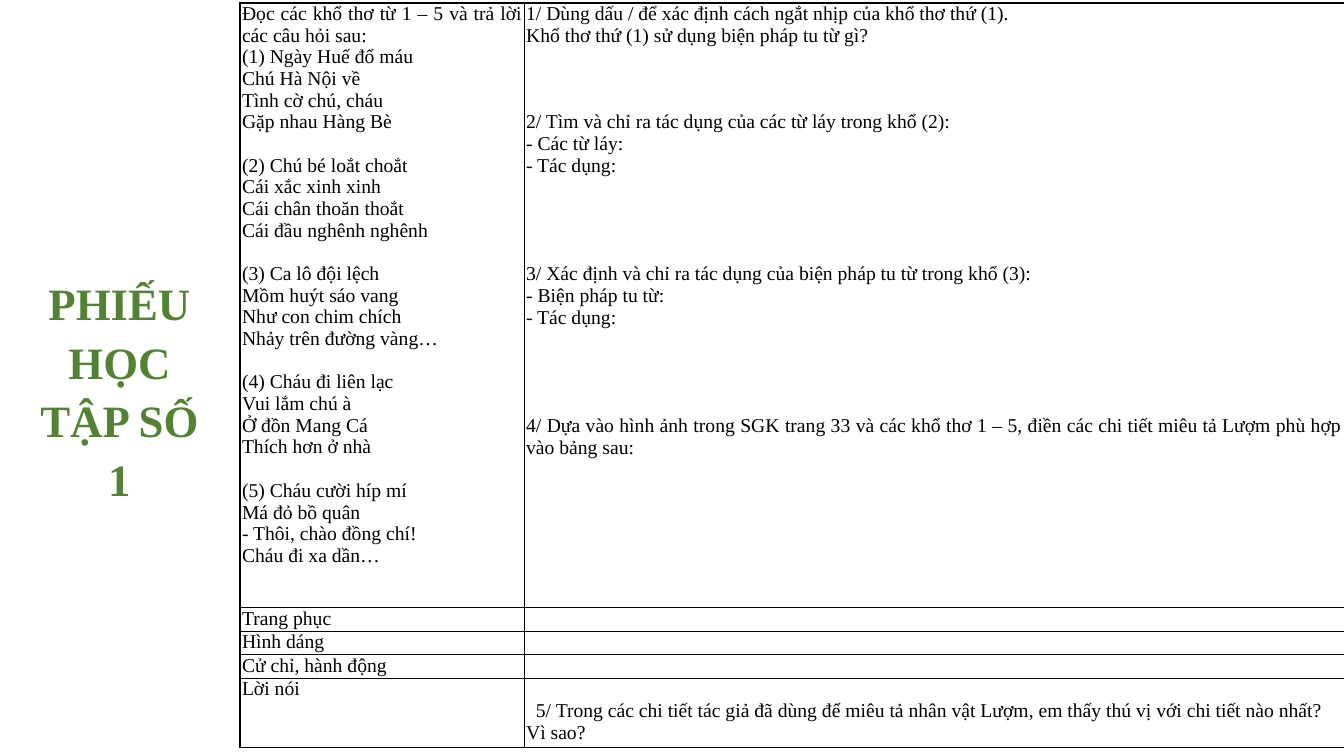
from dataclasses import dataclass, field

import pptx
import pptx.dml.color
import pptx.enum.text
import pptx.oxml
import pptx.oxml.ns
import pptx.presentation
import pptx.slide
import pptx.table
import pptx.text.text
import pptx.util

BLACK = pptx.dml.color.RGBColor(0, 0, 0)
GREEN = pptx.dml.color.RGBColor(0x54, 0x82, 0x35)
FONT = "Times New Roman"
ALIGN = pptx.enum.text.PP_ALIGN
SLIDE_WIDTH = pptx.util.Inches(13.33)
SLIDE_HEIGHT = pptx.util.Inches(7.5)
LINE_PITCH = 15.5
LINE_SHARE = 2.87
COLUMN_SHARES = (21.14, 61.04)
BODY_FORMAT = {"name": FONT, "size": pptx.util.Pt(14)}
TITLE_FORMAT = {"name": FONT, "size": pptx.util.Pt(32), "bold": True}
SIDE_MARGIN = pptx.util.Inches(0.02)
CELL_FORMAT = {"margin_left": SIDE_MARGIN, "margin_right": SIDE_MARGIN,
               "margin_top": 0, "margin_bottom": 0}


@dataclass
class Block:
    """Lines of text that follow a number of free lines."""
    lines: tuple[str, ...]
    free_lines: int = 0
    align: ALIGN = ALIGN.JUSTIFY
    indent: float = 0


@dataclass
class SheetRow:
    """One row of the worksheet, its height counted in text lines."""
    line_count: int
    prompt: list[Block]
    answer: list[Block] = field(default_factory=list)


POEM = [
    Block(("Đọc các khổ thơ từ 1 – 5 và trả lời các câu hỏi sau:",
           "(1) Ngày Huế đổ máu", "Chú Hà Nội về", "Tình cờ chú, cháu",
           "Gặp nhau Hàng Bè")),
    Block(("(2) Chú bé loắt choắt", "Cái xắc xinh xinh",
           "Cái chân thoăn thoắt", "Cái đầu nghênh nghênh"), 1),
    Block(("(3) Ca lô đội lệch", "Mồm huýt sáo vang", "Như con chim chích",
           "Nhảy trên đường vàng…"), 1),
    Block(("(4) Cháu đi liên lạc", "Vui lắm chú à", "Ở đồn Mang Cá",
           "Thích hơn ở nhà"), 1),
    Block(("(5) Cháu cười híp mí", "Má đỏ bồ quân",
           "- Thôi, chào đồng chí!", "Cháu đi xa dần…"), 1),
]
QUESTIONS = [
    Block(("1/ Dùng dấu / để xác định cách ngắt nhịp của khổ thơ thứ (1).",
           "Khổ thơ thứ (1) sử dụng biện pháp tu từ gì?")),
    Block(("2/ Tìm và chỉ ra tác dụng của các từ láy trong khổ (2):",
           "- Các từ láy:", "- Tác dụng:"), 3),
    Block(("3/ Xác định và chỉ ra tác dụng của biện pháp tu từ trong khổ (3):",
           "- Biện pháp tu từ:", "- Tác dụng:"), 4),
    Block(("4/ Dựa vào hình ảnh trong SGK trang 33 và các khổ thơ 1 – 5, "
           "điền các chi tiết miêu tả Lượm phù hợp vào bảng sau:",), 4),
]
LAST_QUESTION = Block(
    ("5/ Trong các chi tiết tác giả đã dùng để miêu tả nhân vật Lượm, "
     "em thấy thú vị với chi tiết nào nhất? Vì sao?",), 1, ALIGN.LEFT, 7)
SHEET = [
    SheetRow(26, POEM, QUESTIONS),
    *(SheetRow(1, [Block((trait,))])
      for trait in ("Trang phục", "Hình dáng", "Cử chỉ, hành động")),
    SheetRow(3, [Block(("Lời nói",))], [LAST_QUESTION]),
]


def across(share: float) -> pptx.util.Emu:
    """Return a percentage of the slide's width."""
    return pptx.util.Emu(round(SLIDE_WIDTH * share / 100))


def down(share: float) -> pptx.util.Emu:
    """Return a percentage of the slide's height."""
    return pptx.util.Emu(round(SLIDE_HEIGHT * share / 100))


def apply_format(target: object, values: dict[str, object]) -> None:
    """Set every attribute named in the format values."""
    for attribute, value in values.items():
        setattr(target, attribute, value)


def add_text(paragraph: pptx.text.text._Paragraph, text: str,
             values: dict[str, object], color: pptx.dml.color.RGBColor) -> None:
    """Add a formatted run to the paragraph."""
    run = paragraph.add_run()
    run.text = text
    apply_format(run.font, values)
    run.font.color.rgb = color


def draw_borders(cell: pptx.table._Cell) -> None:
    """Give the cell thin black edges and no fill."""
    properties = cell._tc.get_or_add_tcPr()
    for edge in ("lnL", "lnR", "lnT", "lnB"):
        properties.append(pptx.oxml.parse_xml(
            f'<a:{edge} {pptx.oxml.ns.nsdecls("a")} w="12700"><a:solidFill>'
            f'<a:srgbClr val="{BLACK}"/></a:solidFill></a:{edge}>'))
    cell.fill.background()


def fill_cell(cell: pptx.table._Cell, blocks: list[Block]) -> None:
    """Write the blocks into the cell, spaced by their free lines."""
    draw_borders(cell)
    apply_format(cell, CELL_FORMAT)
    paragraph = cell.text_frame.paragraphs[0]
    if not blocks:
        end = paragraph._p.get_or_add_endParaRPr()
        end.set("sz", str(BODY_FORMAT["size"].centipoints))
        return
    cell.margin_top = pptx.util.Pt(blocks[0].free_lines * LINE_PITCH)
    for block_index, block in enumerate(blocks):
        for line_index, line in enumerate(block.lines):
            if block_index or line_index:
                paragraph = cell.text_frame.add_paragraph()
            if block_index and not line_index:
                paragraph.space_before = pptx.util.Pt(block.free_lines * LINE_PITCH)
            paragraph.alignment = block.align
            if block.indent:
                indent = pptx.util.Pt(block.indent)
                paragraph._p.get_or_add_pPr().set("indent", str(int(indent)))
            add_text(paragraph, line, BODY_FORMAT, BLACK)


def draw_sheet(slide: pptx.slide.Slide) -> None:
    """Draw the worksheet table."""
    line_total = sum(row.line_count for row in SHEET)
    table = slide.shapes.add_table(
        len(SHEET), len(COLUMN_SHARES), across(17.86), down(0.4),
        across(sum(COLUMN_SHARES)), down(line_total * LINE_SHARE)).table
    apply_format(table, {"first_row": False, "horz_banding": False})
    for column, share in zip(table.columns, COLUMN_SHARES):
        column.width = across(share)
    for index, row in enumerate(SHEET):
        table.rows[index].height = down(row.line_count * LINE_SHARE)
        fill_cell(table.cell(index, 0), row.prompt)
        fill_cell(table.cell(index, 1), row.answer)


def draw_title(slide: pptx.slide.Slide) -> None:
    """Place the worksheet's title beside the table."""
    title = slide.shapes.title
    apply_format(title, {"left": across(1.95), "top": down(35.2),
                         "width": across(13.88), "height": down(30.13)})
    apply_format(title.text_frame, {
        "word_wrap": True,
        "auto_size": pptx.enum.text.MSO_AUTO_SIZE.SHAPE_TO_FIT_TEXT,
        "vertical_anchor": pptx.enum.text.MSO_ANCHOR.TOP})
    heading = title.text_frame.paragraphs[0]
    apply_format(heading, {"alignment": ALIGN.CENTER, "line_spacing": 1.09})
    add_text(heading, "PHIẾU HỌC TẬP SỐ 1", TITLE_FORMAT, GREEN)


def main() -> None:
    """Build and save the worksheet slide."""
    deck = pptx.Presentation()
    apply_format(deck, {"slide_width": SLIDE_WIDTH, "slide_height": SLIDE_HEIGHT})
    slide = deck.slides.add_slide(deck.slide_layouts[5])
    draw_sheet(slide)
    draw_title(slide)
    deck.save("out.pptx")


if __name__ == "__main__":
    main()
